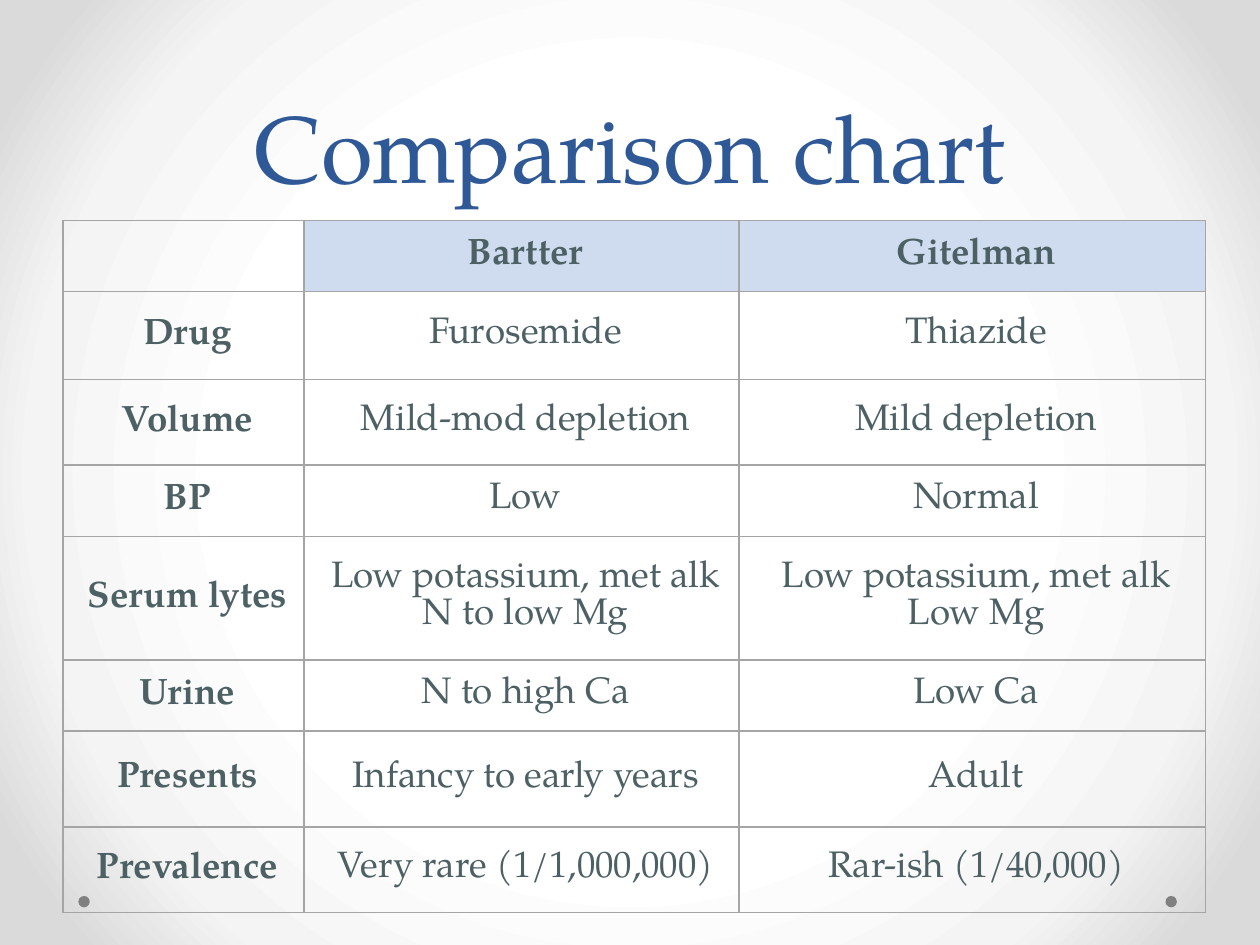
from lxml.etree import SubElement
from pptx import Presentation
from pptx.dml.color import RGBColor
from pptx.enum.shapes import MSO_SHAPE
from pptx.enum.text import MSO_ANCHOR, MSO_AUTO_SIZE, PP_ALIGN
from pptx.oxml import parse_xml
from pptx.oxml.ns import nsdecls, qn
from pptx.util import Pt

FONT = "TeX Gyre Pagella"
TITLE_COLOR = "2F5897"
TEXT_COLOR = "4D6165"
HEADER_FILL = "CFDCF0"
BORDER_COLOR = "A4A5A4"
DOT_COLOR = "808080"
BACKGROUND_STOPS = [(50, "FFFFFF"), (76, "F4F4F4"), (92, "DADADA")]

COLUMN_WIDTHS = [137.7, 248.7, 266.4]
ROW_HEIGHTS = [40.7, 50.2, 49, 40.7, 70.6, 40.7, 54.7, 49]
ROWS = [
    ["", "Bartter", "Gitelman"],
    ["Drug", "Furosemide", "Thiazide"],
    ["Volume", "Mild-mod depletion", "Mild depletion"],
    ["BP", "Low", "Normal"],
    ["Serum lytes", "Low potassium, met alk\nN to low Mg", "Low potassium, met alk\nLow Mg"],
    ["Urine", "N to high Ca", "Low Ca"],
    ["Presents", "Infancy to early years", "Adult"],
    ["Prevalence", "Very rare (1/1,000,000)", "Rar-ish (1/40,000)"],
]


def color(value):
    return RGBColor.from_string(value)


def add_run(paragraph, text, size, font_color, bold=False):
    run = paragraph.add_run()
    run.text = text
    run.font.name = FONT
    run.font.size = Pt(size)
    run.font.bold = bold
    run.font.color.rgb = color(font_color)


def set_background(slide):
    stops = "".join(
        f'<a:gs pos="{position * 1000}"><a:srgbClr val="{value}"/></a:gs>'
        for position, value in BACKGROUND_STOPS
    )
    background = parse_xml(
        f'<p:bg {nsdecls("p", "a")}><p:bgPr><a:gradFill rotWithShape="1">'
        f'<a:gsLst>{stops}</a:gsLst><a:path path="circle">'
        '<a:fillToRect l="50000" t="50000" r="50000" b="50000"/></a:path>'
        '</a:gradFill><a:effectLst/></p:bgPr></p:bg>'
    )
    slide.element.cSld.insert(0, background)


def add_dot(slide, left):
    dot = slide.shapes.add_shape(MSO_SHAPE.OVAL, Pt(left), Pt(512), Pt(6.5), Pt(6.5))
    dot.shadow.inherit = False
    dot.fill.solid()
    dot.fill.fore_color.rgb = color(DOT_COLOR)
    dot.line.fill.background()


def set_title(slide, text):
    title = slide.shapes.title
    title.left, title.top, title.width, title.height = Pt(36), Pt(13.5), Pt(648), Pt(106)
    frame = title.text_frame
    frame.word_wrap = True
    frame.auto_size = MSO_AUTO_SIZE.NONE
    frame.vertical_anchor = MSO_ANCHOR.BOTTOM
    paragraph = frame.paragraphs[0]
    paragraph.alignment = PP_ALIGN.CENTER
    paragraph.line_spacing = Pt(58)
    add_run(paragraph, text, 54, TITLE_COLOR)


def add_borders(cell):
    properties = cell._tc.get_or_add_tcPr()
    for index, side in enumerate(("a:lnL", "a:lnR", "a:lnT", "a:lnB")):
        line = properties.makeelement(qn(side), {"w": str(Pt(1))})
        fill = SubElement(line, qn("a:solidFill"))
        SubElement(fill, qn("a:srgbClr"), val=BORDER_COLOR)
        properties.insert(index, line)


def fill_cell(cell, text, is_header, bold):
    cell.margin_left = cell.margin_right = Pt(2.25)
    cell.margin_top = cell.margin_bottom = Pt(2.25)
    cell.vertical_anchor = MSO_ANCHOR.MIDDLE
    if is_header:
        cell.fill.solid()
        cell.fill.fore_color.rgb = color(HEADER_FILL)
    else:
        cell.fill.background()
    add_borders(cell)
    if not text:
        return
    frame = cell.text_frame
    for index, line in enumerate(text.split("\n")):
        paragraph = frame.add_paragraph() if index else frame.paragraphs[0]
        paragraph.alignment = PP_ALIGN.CENTER
        paragraph.line_spacing = Pt(21)
        paragraph._p.get_or_add_pPr().set("marL", str(Pt(4.5)))
        add_run(paragraph, line, 21, TEXT_COLOR, bold)


def add_comparison_table(slide):
    shape = slide.shapes.add_table(
        len(ROWS), len(COLUMN_WIDTHS), Pt(36), Pt(126),
        Pt(sum(COLUMN_WIDTHS)), Pt(sum(ROW_HEIGHTS)),
    )
    table = shape.table
    table.first_row = False
    table.horz_banding = False
    for column, width in zip(table.columns, COLUMN_WIDTHS):
        column.width = Pt(width)
    for row, height in zip(table.rows, ROW_HEIGHTS):
        row.height = Pt(height)
    for row_index, texts in enumerate(ROWS):
        for column_index, text in enumerate(texts):
            is_header = row_index == 0 and column_index > 0
            bold = row_index == 0 or column_index == 0
            fill_cell(table.cell(row_index, column_index), text, is_header, bold)


def main():
    presentation = Presentation()
    presentation.slide_width = Pt(720)
    presentation.slide_height = Pt(540)
    slide = presentation.slides.add_slide(presentation.slide_layouts[5])
    set_background(slide)
    for left in (666, 44.8):
        add_dot(slide, left)
    add_comparison_table(slide)
    set_title(slide, "Comparison chart")
    presentation.save("out.pptx")


if __name__ == "__main__":
    main()
